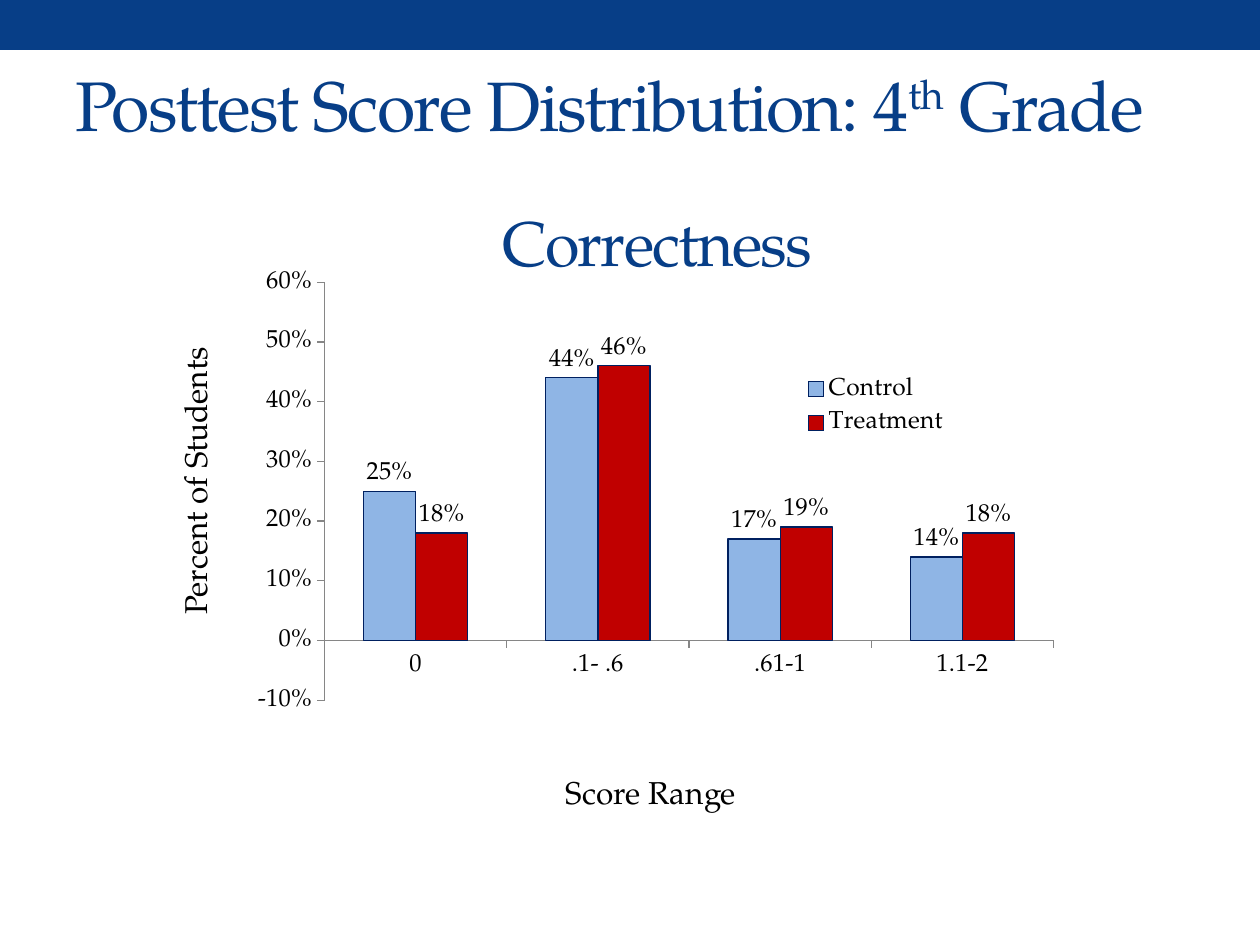
"""Build the slide on fourth grade posttest scores."""
from dataclasses import dataclass

from lxml import etree
from pptx import Presentation
from pptx.chart.data import CategoryChartData
from pptx.dml.color import RGBColor
from pptx.enum.chart import XL_CHART_TYPE, XL_LABEL_POSITION, XL_LEGEND_POSITION, XL_TICK_MARK
from pptx.enum.shapes import MSO_SHAPE
from pptx.enum.text import MSO_ANCHOR, PP_ALIGN
from pptx.oxml.ns import qn
from pptx.util import Emu, Pt

COLUMN = XL_CHART_TYPE.COLUMN_CLUSTERED
OUTER = XL_LABEL_POSITION.OUTSIDE_END
RIGHT = XL_LEGEND_POSITION.RIGHT
TICK_OUT, TICK_NONE = XL_TICK_MARK.OUTSIDE, XL_TICK_MARK.NONE
RECT = MSO_SHAPE.RECTANGLE
MIDDLE, TOP = MSO_ANCHOR.MIDDLE, MSO_ANCHOR.TOP
LEFT, CENTER = PP_ALIGN.LEFT, PP_ALIGN.CENTER
SCALE = 914400 / 126


@dataclass(frozen=True)
class Theme:
    font: str = "TeX Gyre Pagella"
    blue: str = "073E87"
    black: str = "000000"
    sky: str = "8FB5E5"
    red: str = "C00000"
    edge: str = "002060"
    gray: str = "868686"
    title: int = 40
    head: int = 36
    label: int = 18
    chart: int = 14


@dataclass(frozen=True)
class Box:
    x: int
    y: int
    w: int
    h: int

    def emu(self) -> list[Emu]:
        return [px(n) for n in (self.x, self.y, self.w, self.h)]


@dataclass(frozen=True)
class Label:
    box: Box
    runs: tuple[str, ...]
    size: int
    color: str
    align: PP_ALIGN = CENTER
    anchor: MSO_ANCHOR = TOP
    space: int = 0
    turn: int = 0


@dataclass(frozen=True)
class Group:
    name: str
    color: str
    scores: tuple[float, ...]


THEME = Theme()
LABELS = (
    Label(Box(63, 35, 1134, 136), ("Posttest Score Distribution: 4", "th", " Grade"),
          THEME.title, THEME.blue, LEFT, MIDDLE, -100),
    Label(Box(476, 767, 350, 50), ("Score Range",), THEME.label, THEME.black),
    Label(Box(20, 456, 350, 50), ("Percent of Students",), THEME.label, THEME.black, turn=270),
    Label(Box(161, 173, 993, 136), ("Correctness",), THEME.head, THEME.blue,
          anchor=MIDDLE, space=-100),
)
RANGES = ("0", ".1- .6", ".61-1", "1.1-2")
GROUPS = (
    Group("Control", THEME.sky, (0.25, 0.44, 0.17, 0.14)),
    Group("Treatment", THEME.red, (0.18, 0.46, 0.19, 0.18)),
)


def px(n: int) -> Emu:
    return Emu(round(n * SCALE))


def rgb(code: str) -> RGBColor:
    return RGBColor.from_string(code)


def style(font, size: int, color: str) -> None:
    font.name, font.size = THEME.font, Pt(size)
    font.color.rgb = rgb(color)


def add_band(shapes, box: Box) -> None:
    band = shapes.add_shape(RECT, *box.emu())
    band.shadow.inherit = False
    band.fill.solid()
    band.fill.fore_color.rgb = rgb(THEME.blue)
    band.line.fill.background()


def add_label(shapes, label: Label) -> None:
    shape = shapes.add_textbox(*label.box.emu())
    shape.rotation = label.turn
    frame = shape.text_frame
    frame.word_wrap, frame.vertical_anchor = True, label.anchor
    para = frame.paragraphs[0]
    para.alignment = label.align
    style(para.font, label.size, label.color)
    for text in label.runs:
        run = para.add_run()
        run.text = text
        props = run._r.get_or_add_rPr()
        if label.space:
            props.set("spc", str(label.space))
        if text == "th":
            props.set("baseline", "30000")


def place(part, spot: tuple[float, ...], inner: bool = False) -> None:
    old = part.find(qn("c:layout"))
    if old is not None:
        part.remove(old)
    layout = etree.Element(qn("c:layout"))
    manual = etree.SubElement(layout, qn("c:manualLayout"))
    pairs = [("layoutTarget", "inner")] if inner else []
    pairs += [("xMode", "edge"), ("yMode", "edge"), *zip("xywh", spot)]
    for tag, val in pairs:
        etree.SubElement(manual, qn(f"c:{tag}")).set("val", str(val))
    pos = part.find(qn("c:legendPos"))
    part.insert(0 if pos is None else 1, layout)


def style_axis(axis) -> None:
    axis.has_major_gridlines = False
    axis.major_tick_mark, axis.minor_tick_mark = TICK_OUT, TICK_NONE
    axis.format.line.color.rgb = rgb(THEME.gray)
    axis.format.line.width = Pt(0.75)
    style(axis.tick_labels.font, THEME.chart, THEME.black)


def style_bars(bars, group: Group) -> None:
    bars.format.fill.solid()
    bars.format.fill.fore_color.rgb = rgb(group.color)
    bars.format.line.color.rgb = rgb(THEME.edge)
    bars.format.line.width = Pt(0.75)
    tags = bars.data_labels
    tags.show_value, tags.position = True, OUTER
    tags.number_format, tags.number_format_is_linked = "0%", False
    style(tags.font, THEME.chart, THEME.black)


def add_scores(shapes, box: Box) -> None:
    data = CategoryChartData(number_format="0%")
    data.categories = RANGES
    for group in GROUPS:
        data.add_series(group.name, group.scores)
    chart = shapes.add_chart(COLUMN, *box.emu(), data).chart
    chart.has_title = False
    style(chart.font, THEME.chart, THEME.black)
    plot = chart.plots[0]
    plot.gap_width, plot.overlap, plot.vary_by_categories = 150, 0, False
    for bars, group in zip(plot.series, GROUPS):
        style_bars(bars, group)
    style_axis(chart.category_axis)
    axis = chart.value_axis
    style_axis(axis)
    axis.minimum_scale, axis.maximum_scale, axis.major_unit = -0.1, 0.6, 0.1
    axis.tick_labels.number_format = "0%"
    axis.tick_labels.number_format_is_linked = False
    chart.has_legend = True
    legend = chart.legend
    legend.position, legend.include_in_layout = RIGHT, False
    style(legend.font, THEME.chart, THEME.black)
    place(legend._element, (0.64, 0.22, 0.18, 0.15))
    area = chart._chartSpace.find(f".//{qn('c:plotArea')}")
    place(area, (0.094, 0.05, 0.841, 0.828), True)


def main() -> None:
    deck = Presentation()
    deck.slide_width, deck.slide_height = px(1260), px(945)
    shapes = deck.slides.add_slide(deck.slide_layouts[6]).shapes
    add_band(shapes, Box(0, 0, 1260, 50))
    for label in LABELS:
        add_label(shapes, label)
    add_scores(shapes, Box(243, 257, 867, 505))
    deck.save("out.pptx")


if __name__ == "__main__":
    main()
